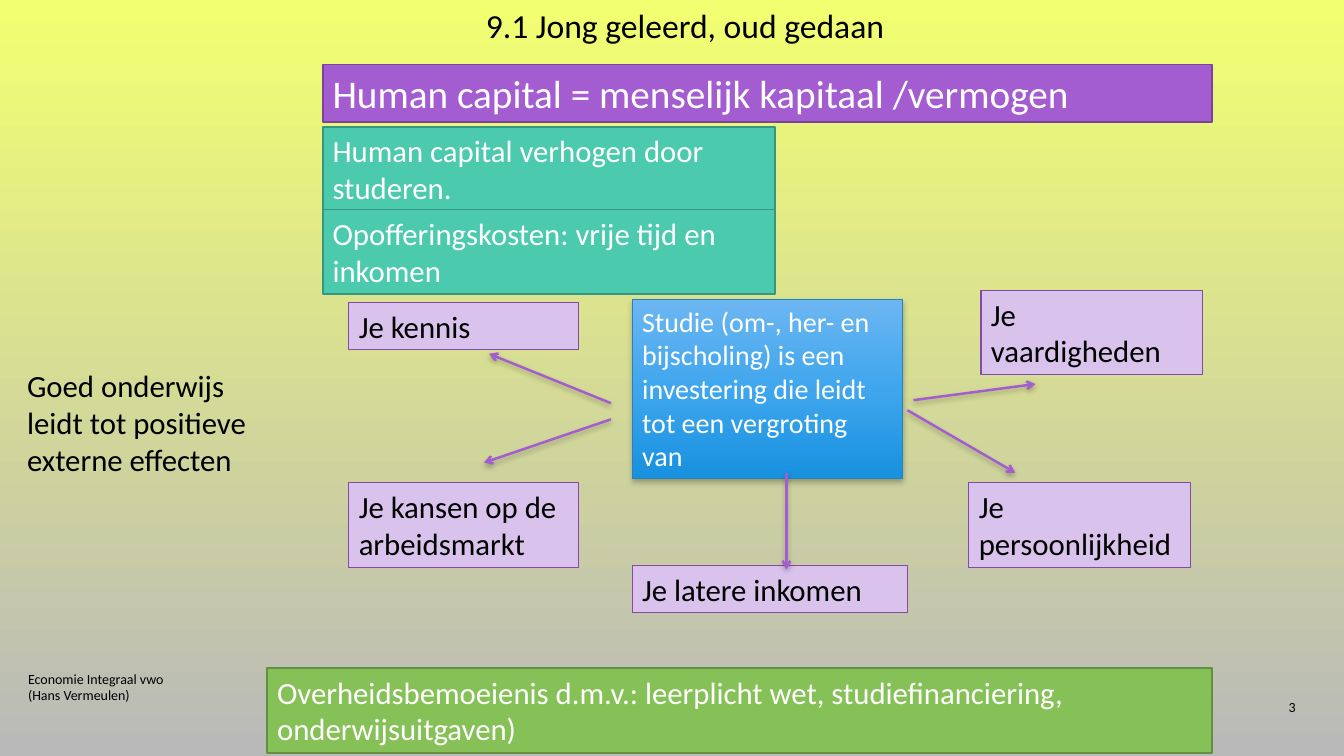
from copy import deepcopy

from lxml import etree
from pptx import Presentation
from pptx.dml.color import RGBColor
from pptx.enum import shapes, text
from pptx.oxml import ns
from pptx.util import Inches, Pt

BLACK = RGBColor(0x00, 0x00, 0x00)
WHITE = RGBColor(0xFF, 0xFF, 0xFF)
YELLOW = RGBColor(0xF2, 0xFF, 0x71)
GREY = RGBColor(0xB9, 0xB9, 0xB9)
PURPLE = RGBColor(0xA3, 0x5D, 0xD1)
PURPLE_EDGE = RGBColor(0x79, 0x45, 0x9B)
TEAL = RGBColor(0x4B, 0xCA, 0xAD)
TEAL_EDGE = RGBColor(0x37, 0x95, 0x80)
GREEN = RGBColor(0x86, 0xC1, 0x57)
GREEN_EDGE = RGBColor(0x63, 0x8F, 0x40)
LILAC = RGBColor(0xD9, 0xC3, 0xEC)
LILAC_EDGE = RGBColor(0x83, 0x4A, 0xA7)
BLUES = [(0, RGBColor(0x6C, 0xB6, 0xF1)), (0.5, RGBColor(0x3F, 0xA6, 0xEE)),
         (1, RGBColor(0x18, 0x91, 0xDF))]
BLUE_EDGE = RGBColor(0x26, 0x83, 0xBF)


def write_text(shape, content, size=22, color=BLACK, align=text.PP_ALIGN.LEFT,
               anchor=text.MSO_ANCHOR.TOP):
    """Fill a shape with one paragraph per line of content."""
    frame = shape.text_frame
    frame.word_wrap = True
    frame.vertical_anchor = anchor
    frame.text = content
    for paragraph in frame.paragraphs:
        paragraph.alignment = align
        paragraph.font.name = "Calibri"
        paragraph.font.size = Pt(size)
        paragraph.font.color.rgb = color


def add_label(slide, box, content, **style):
    """Add plain text in a box of inches."""
    write_text(slide.shapes.add_textbox(*map(Inches, box)), content, **style)


def add_panel(slide, box, content, fill, edge, edge_width=1.25, **style):
    """Add a filled, outlined rectangle with text."""
    panel = slide.shapes.add_shape(shapes.MSO_SHAPE.RECTANGLE, *map(Inches, box))
    panel.shadow.inherit = False
    panel.fill.solid()
    panel.fill.fore_color.rgb = fill
    panel.line.color.rgb = edge
    panel.line.width = Pt(edge_width)
    write_text(panel, content, **style)
    return panel


def apply_gradient(fill, colors):
    """Give a fill a top-to-bottom gradient of (position, colour) stops."""
    fill.gradient()
    fill.gradient_angle = 270
    stop_list = fill.gradient_stops
    first = stop_list[0]
    for _ in range(len(colors) - len(stop_list)):
        parent = fill._fill._gradFill.gsLst
        parent.append(deepcopy(parent[0]))
    for stop, (position, color) in zip(fill.gradient_stops, colors):
        stop.position = position
        stop.color.rgb = color


def add_shadow(shape):
    """Give a shape a soft shadow that falls downwards."""
    properties = shape._element.spPr
    for effects in properties.findall(ns.qn("a:effectLst")):
        properties.remove(effects)
    effects = etree.SubElement(properties, ns.qn("a:effectLst"))
    shadow = etree.SubElement(effects, ns.qn("a:outerShdw"), blurRad=str(Pt(4)),
                              dist=str(Pt(2)), dir="5400000", rotWithShape="0")
    color = etree.SubElement(shadow, ns.qn("a:srgbClr"), val=str(BLACK))
    etree.SubElement(color, ns.qn("a:alpha"), val="28000")


def add_arrow(slide, start, end):
    """Add a shadowed purple arrow between two points in inches."""
    arrow = slide.shapes.add_connector(shapes.MSO_CONNECTOR.STRAIGHT,
                                       *map(Inches, start + end))
    arrow.line.color.rgb = PURPLE
    arrow.line.width = Pt(1.75)
    etree.SubElement(arrow.line._get_or_add_ln(), ns.qn("a:tailEnd"), type="arrow")
    add_shadow(arrow)


def add_definitions(slide, left, top):
    """Stack the human capital heading and its two statements."""
    add_panel(slide, (left, top, 8.82, 0.57),
              "Human capital = menselijk kapitaal /vermogen",
              PURPLE, PURPLE_EDGE, size=28, color=WHITE)
    statements = ["Human capital verhogen door studeren.",
                  "Opofferingskosten: vrije tijd en inkomen"]
    for row, statement in enumerate(statements):
        add_panel(slide, (left, top + 0.62 + 0.82 * row, 4.49, 0.84), statement,
                  TEAL, TEAL_EDGE, color=WHITE)


def add_study_diagram(slide, left, top):
    """Place the study box with its five outcomes and arrows."""
    study = add_panel(slide, (left + 2.81, top + 0.09, 2.68, 1.78),
                      "Studie (om-, her- en bijscholing) is een investering "
                      "die leidt tot een vergroting van",
                      BLUES[0][1], BLUE_EDGE, 0.75, size=20, color=WHITE)
    apply_gradient(study.fill, BLUES)
    add_shadow(study)
    outcomes = [
        (6.15, 1.91, 2.2, 0.84, "Je persoonlijkheid"),
        (0, 1.91, 2.28, 0.84, "Je kansen op de\narbeidsmarkt"),
        (0, 0.12, 2.28, 0.47, "Je kennis"),
        (6.27, 0, 2.2, 0.84, "Je vaardigheden"),
        (2.81, 2.73, 2.73, 0.47, "Je latere inkomen"),
    ]
    for x, y, width, height, content in outcomes:
        add_panel(slide, (left + x, top + y, width, height), content,
                  LILAC, LILAC_EDGE, 0.75)
    arrows = [(2.6, 1.12, 1.39, 0.63), (2.6, 1.28, 1.34, 1.71),
              (5.6, 1.09, 6.81, 0.93), (5.54, 1.19, 6.61, 1.81),
              (4.34, 1.81, 4.34, 2.77)]
    for x1, y1, x2, y2 in arrows:
        add_arrow(slide, (left + x1, top + y1), (left + x2, top + y2))


def add_footer(slide, left, top):
    """Place the source, the government panel and the page number."""
    middle = text.MSO_ANCHOR.MIDDLE
    add_label(slide, (left, top, 1.65, 0.47),
              "Economie Integraal vwo (Hans Vermeulen)", size=10, anchor=middle)
    add_label(slide, (left + 11.93, top + 0.23, 0.84, 0.4), "3", size=10,
              align=text.PP_ALIGN.RIGHT, anchor=middle)
    add_panel(slide, (left + 2.47, top + 0.05, 9.37, 0.84),
              "Overheidsbemoeienis d.m.v.: leerplicht wet, studiefinanciering, "
              "onderwijsuitgaven)", GREEN, GREEN_EDGE, color=WHITE)


def main():
    """Build and save the slide."""
    presentation = Presentation()
    presentation.slide_width = Inches(13.33)
    presentation.slide_height = Inches(7.5)
    slide = presentation.slides.add_slide(presentation.slide_layouts[6])
    apply_gradient(slide.background.fill, [(0, YELLOW), (1, GREY)])
    add_footer(slide, 0.18, 6.58)
    add_definitions(slide, 3.2, 0.64)
    add_study_diagram(slide, 3.46, 2.88)
    add_label(slide, (0.17, 3.59, 2.68, 1.21),
              "Goed onderwijs leidt tot positieve externe effecten")
    add_label(slide, (4.72, 0, 5.09, 0.5), "9.1 Jong geleerd, oud gedaan", size=24)
    presentation.save("out.pptx")


if __name__ == "__main__":
    main()
